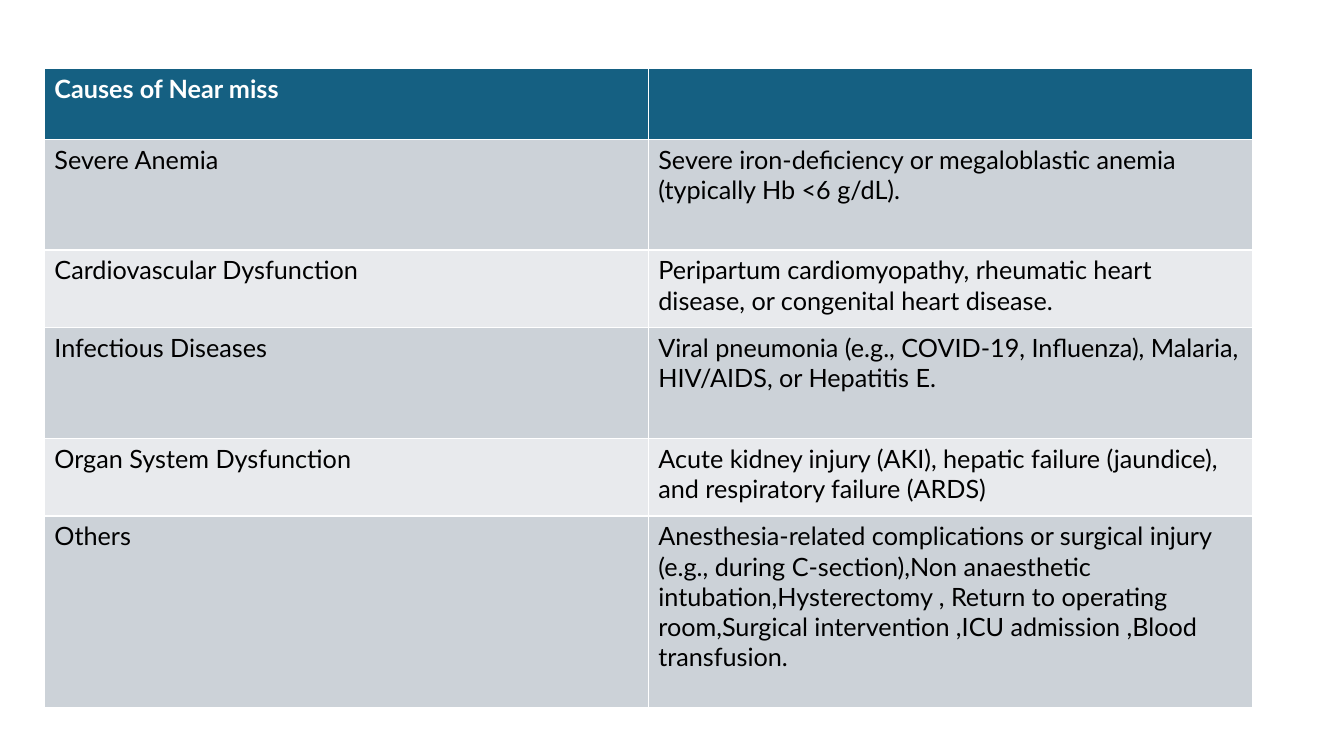
from pptx import Presentation
from pptx.dml.color import RGBColor
from pptx.util import Inches, Pt

WHITE = RGBColor(0xFF, 0xFF, 0xFF)
BLACK = RGBColor(0x00, 0x00, 0x00)
HEADER_BLUE = RGBColor(0x15, 0x60, 0x82)
BAND_DARK = RGBColor(0xCC, 0xD2, 0xD8)
BAND_LIGHT = RGBColor(0xE8, 0xEA, 0xED)

CAUSES = [
    ("Causes of Near miss", "", 0.7),
    ("Severe Anemia",
     "Severe iron-deficiency or megaloblastic anemia (typically Hb <6 g/dL).", 1.1),
    ("Cardiovascular Dysfunction",
     "Peripartum cardiomyopathy, rheumatic heart disease, or congenital heart disease.", 0.77),
    ("Infectious Diseases",
     "Viral pneumonia (e.g., COVID-19, Influenza), Malaria, HIV/AIDS, or Hepatitis E.", 1.1),
    ("Organ System Dysfunction",
     "Acute kidney injury (AKI), hepatic failure (jaundice), and respiratory failure (ARDS)", 0.77),
    ("Others",
     "Anesthesia-related complications or surgical injury (e.g., during C-section),"
     "Non anaesthetic intubation,Hysterectomy , Return to operating room,"
     "Surgical intervention ,ICU admission ,Blood transfusion.", 1.9),
]


def fill_cell(cell, text, fill, color=BLACK, bold=False, size=18, font="Lato"):
    cell.fill.solid()
    cell.fill.fore_color.rgb = fill
    paragraph = cell.text_frame.paragraphs[0]
    paragraph.font.size = Pt(size)
    if text:
        run = paragraph.add_run()
        run.text = text
        run.font.name = font
        run.font.size = Pt(size)
        run.font.bold = bold
        run.font.color.rgb = color


presentation = Presentation()
presentation.slide_width = Inches(13.33)
presentation.slide_height = Inches(7.5)
slide = presentation.slides.add_slide(presentation.slide_layouts[6])

table = slide.shapes.add_table(
    len(CAUSES), 2, Inches(0.44), Inches(0.68), Inches(11.98), Inches(6.34)
).table

for row_index, (cause, details, height) in enumerate(CAUSES):
    table.rows[row_index].height = Inches(height)
    is_header = row_index == 0
    band = BAND_DARK if row_index % 2 else BAND_LIGHT
    for column_index, text in enumerate((cause, details)):
        fill_cell(
            table.cell(row_index, column_index),
            text,
            fill=HEADER_BLUE if is_header else band,
            color=WHITE if is_header else BLACK,
            bold=is_header,
        )

presentation.save("out.pptx")
